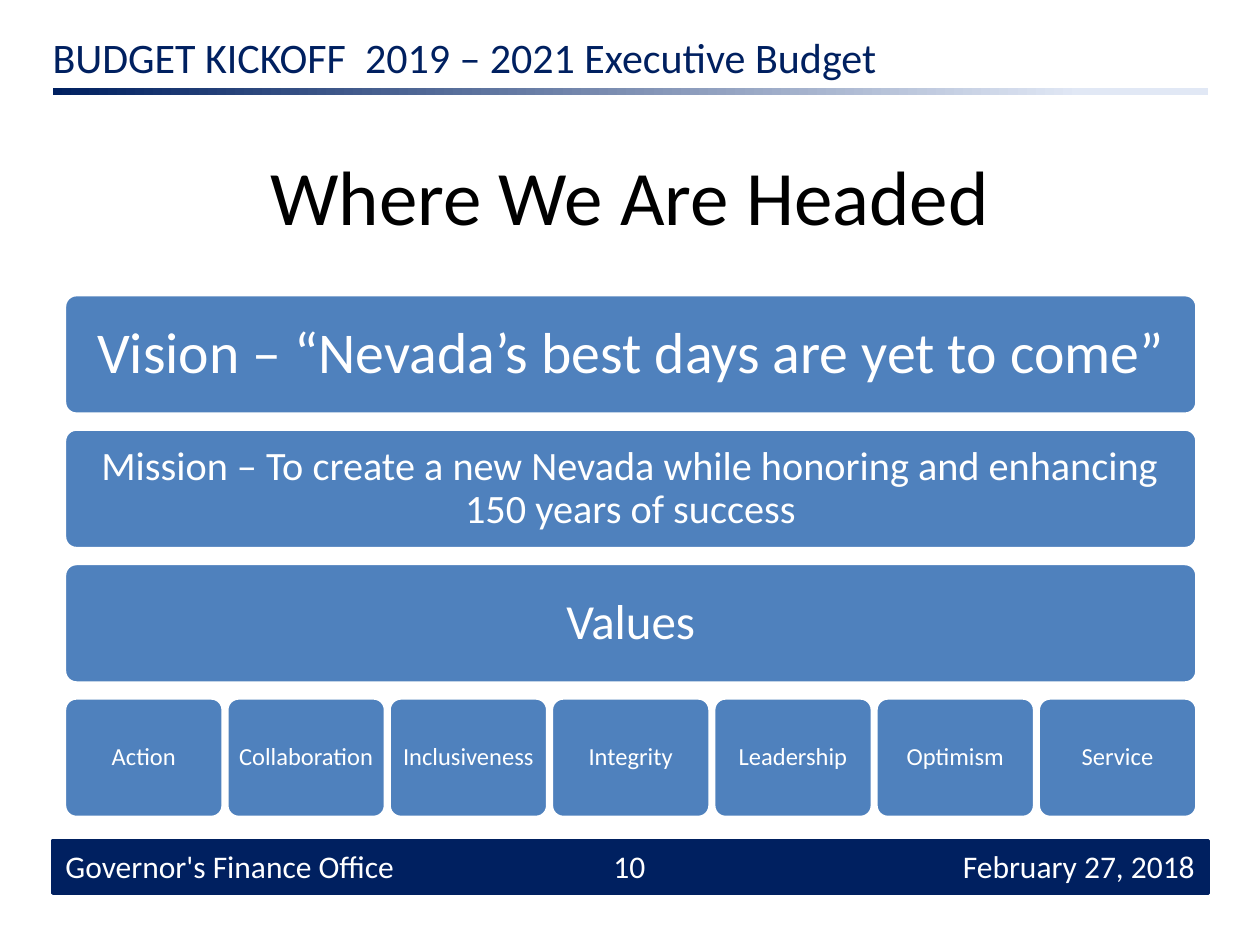
"""Build the "Where We Are Headed" budget kickoff slide."""
import pptx
import pptx.dml.color
import pptx.enum.shapes
import pptx.enum.text
import pptx.util

Cm = pptx.util.Cm
Pt = pptx.util.Pt
Kind = pptx.enum.shapes.MSO_SHAPE
Align = pptx.enum.text.PP_ALIGN
Mid = pptx.enum.text.MSO_ANCHOR.MIDDLE

HUES = {"navy": "002060", "pale": "E1E8F5", "blue": "4F81BD",
        "white": "FFFFFF", "black": "000000"}
SIDES = ("margin_left", "margin_top", "margin_right", "margin_bottom")
LEFT, WIDE, HIGH = 1.3, 22.83, 2.41
TOP, STEP = 5.94, 2.71
ROWS = [("Vision – “Nevada’s best days are yet to come”", 33, 0.36),
        ("Mission – To create a new Nevada while honoring and enhancing "
         "150 years of success", 23, 0.25),
        ("Values", 28, 0.3)]
GOALS = ["Action", "Collaboration", "Inclusiveness", "Integrity",
         "Leadership", "Optimism", "Service"]
CELL = 3.2


def tint(name):
    return pptx.dml.color.RGBColor.from_string(HUES[name])


def apply(item, vals):
    for key, val in vals.items():
        setattr(item, key, val)


def write(shape, text, size, hue, align, pad=None, lead=1.0):
    frame = shape.text_frame
    apply(frame, {"text": text, "word_wrap": True, "vertical_anchor": Mid})
    if pad is not None:
        apply(frame, dict.fromkeys(SIDES, Cm(pad)))
    para = frame.paragraphs[0]
    apply(para, {"alignment": align, "line_spacing": lead})
    apply(para.font, {"name": "Calibri", "size": Pt(size)})
    para.font.color.rgb = tint(hue)


def label(slide, box, text, size, hue, align):
    shape = slide.shapes.add_textbox(*map(Cm, box))
    write(shape, text, size, hue, align)


def block(slide, kind, box, fill, line):
    shape = slide.shapes.add_shape(kind, *map(Cm, box))
    shape.shadow.inherit = False
    shape.fill.solid()
    shape.fill.fore_color.rgb = tint(fill)
    shape.line.color.rgb = tint(line)
    shape.line.width = Pt(2)
    return shape


def card(slide, box, text, size, pad):
    shape = block(slide, Kind.ROUNDED_RECTANGLE, box, "blue", "white")
    shape.adjustments[0] = 0.1
    write(shape, text, size, "white", Align.CENTER, pad, 0.9)


def rule(slide, box):
    shape = slide.shapes.add_shape(Kind.RECTANGLE, *map(Cm, box))
    shape.shadow.inherit = False
    shape.line.fill.background()
    shape.fill.gradient()
    shape.fill.gradient_angle = 0
    stops = zip(shape.fill.gradient_stops, (0, 0.89), ("navy", "pale"))
    for stop, place, hue in stops:
        stop.position = place
        stop.color.rgb = tint(hue)


def title(slide, box, text):
    shape = slide.shapes.title
    apply(shape, dict(zip(("left", "top", "width", "height"), map(Cm, box))))
    write(shape, text, 44, "black", Align.CENTER)


def main():
    deck = pptx.Presentation()
    apply(deck, {"slide_width": Cm(25.4), "slide_height": Cm(19.05)})
    slide = deck.slides.add_slide(deck.slide_layouts[5])

    block(slide, Kind.RECTANGLE, (1.07, 16.94, 23.29, 1.07), "navy", "navy")
    rule(slide, (1.07, 1.78, 23.29, 0.13))
    label(slide, (0.81, 0.64, 23.55, 1.02),
          "BUDGET KICKOFF  2019 – 2021 Executive Budget", 24, "navy", Align.LEFT)
    title(slide, (1.27, 2.34, 22.86, 3.18), "Where We Are Headed")

    for row, (text, size, pad) in enumerate(ROWS):
        card(slide, (LEFT, TOP + row * STEP, WIDE, HIGH), text, size, pad)
    pitch = (WIDE - CELL) / (len(GOALS) - 1)
    base = TOP + len(ROWS) * STEP
    for col, text in enumerate(GOALS):
        card(slide, (LEFT + col * pitch, base, CELL, HIGH), text, 14, 0.15)

    foot = [(1.07, 11.63, "Governor's Finance Office", Align.LEFT),
            (9.73, 5.92, "10", Align.CENTER),
            (18.42, 5.92, "February 27, 2018", Align.RIGHT)]
    for left, wide, text, align in foot:
        label(slide, (left, 16.94, wide, 1.02), text, 18, "white", align)
    deck.save("out.pptx")


if __name__ == "__main__":
    main()
